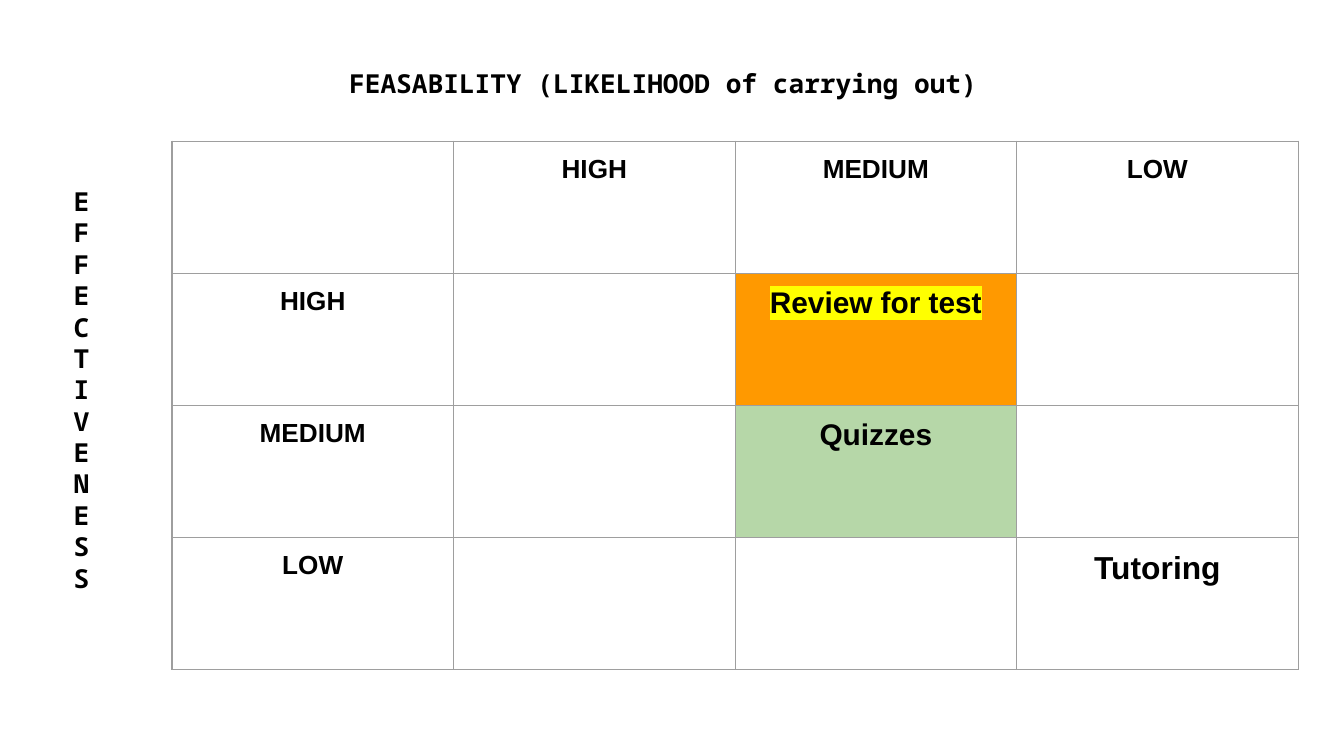
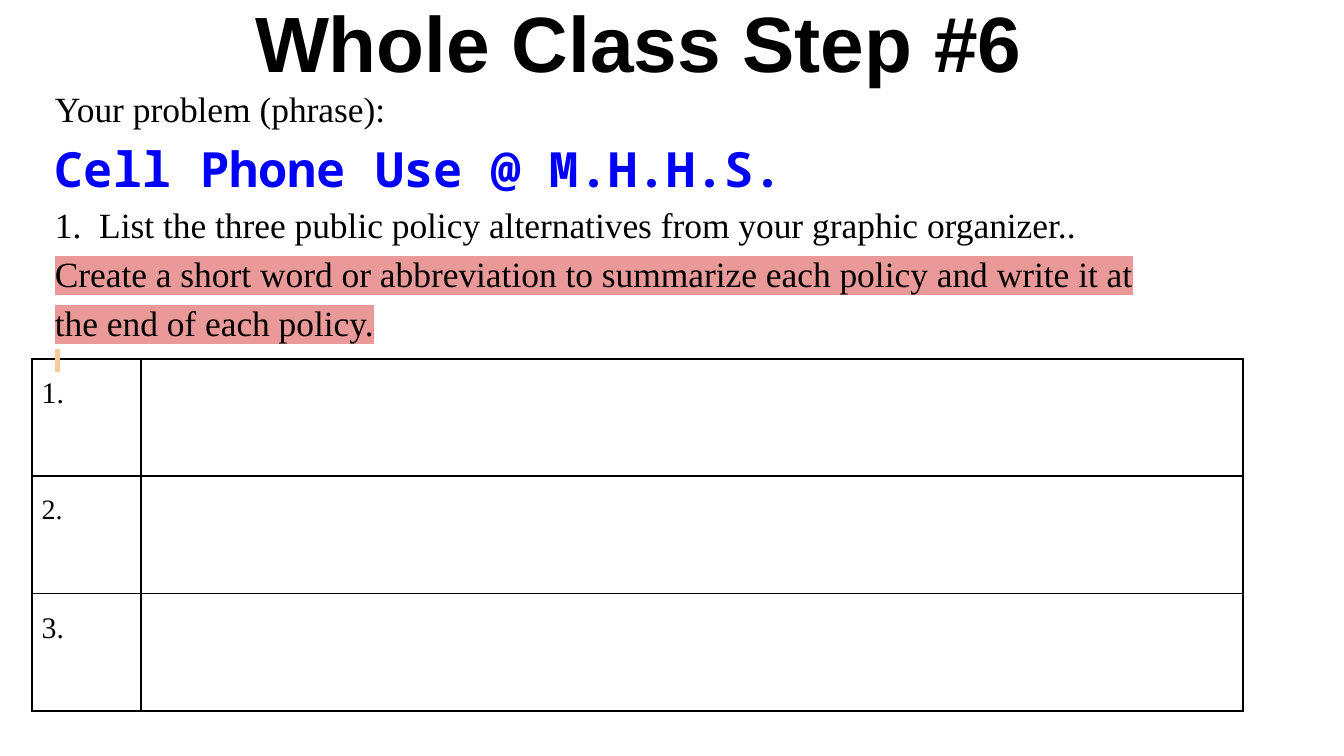
from dataclasses import dataclass
from typing import Optional

from lxml.etree import SubElement
from pptx import Presentation
from pptx.dml.color import RGBColor
from pptx.enum.text import MSO_ANCHOR, PP_ALIGN
from pptx.oxml import parse_xml
from pptx.oxml.ns import nsdecls, qn
from pptx.util import Inches, Pt

BLACK = RGBColor(0x00, 0x00, 0x00)
BLUE = RGBColor(0x00, 0x00, 0xFF)
GRAY = RGBColor(0x9E, 0x9E, 0x9E)
ORANGE = RGBColor(0xFF, 0x99, 0x00)
GREEN = RGBColor(0xB6, 0xD7, 0xA8)
YELLOW = RGBColor(0xFF, 0xFF, 0x00)
PINK = RGBColor(0xEA, 0x99, 0x99)
PEACH = RGBColor(0xF9, 0xCB, 0x9C)

SANS = "Arial"
MONO = "Noto Sans Mono"
SERIF = "Times New Roman"
PAD = Inches(0.1)
LEVELS = ("HIGH", "MEDIUM", "LOW")


@dataclass(frozen=True)
class Style:
    font: str
    size: float
    bold: bool = False
    color: RGBColor = BLACK
    mark: Optional[RGBColor] = None


@dataclass(frozen=True)
class Entry:
    text: str
    style: Style
    fill: Optional[RGBColor] = None


@dataclass(frozen=True)
class Box:
    left: float
    top: float
    width: float
    height: float

    def spots(self) -> tuple:
        return tuple(Inches(n) for n in (self.left, self.top, self.width, self.height))


@dataclass(frozen=True)
class Grid:
    box: Box
    cols: tuple
    rows: int
    line: RGBColor
    weight: float
    inset: float
    align: PP_ALIGN
    space: float


HEAD = Style(SANS, 14, True)
AXIS = Style(MONO, 14, True)
BODY = Style(SERIF, 19)


def paint(run, style: Style) -> None:
    font = run.font
    font.name, font.size, font.bold = style.font, Pt(style.size), style.bold
    font.color.rgb = style.color
    if style.mark is not None:
        mark = parse_xml(f'<a:highlight {nsdecls("a")}><a:srgbClr val="{style.mark}"/></a:highlight>')
        font.fill._xPr.find(qn("a:solidFill")).addnext(mark)


def write(para, parts: list, align: PP_ALIGN = PP_ALIGN.LEFT, space: float = 1.0) -> None:
    para.alignment, para.line_spacing = align, space
    for part in parts:
        run = para.add_run()
        run.text = part.text
        paint(run, part.style)


def add_text(slide, box: Box, lines: list, align: PP_ALIGN = PP_ALIGN.LEFT, space: float = 1.0):
    frame = slide.shapes.add_textbox(*box.spots()).text_frame
    frame.word_wrap = True
    frame.margin_left = frame.margin_right = frame.margin_top = frame.margin_bottom = PAD
    for row, parts in enumerate(lines):
        para = frame.add_paragraph() if row else frame.paragraphs[0]
        write(para, parts, align, space)
    return frame


def add_edge(cell, color: RGBColor, weight: float) -> None:
    props = cell._tc.get_or_add_tcPr()
    for spot, side in enumerate("LRTB"):
        line = parse_xml(
            f'<a:ln{side} {nsdecls("a")} w="{Pt(weight)}"><a:solidFill>'
            f'<a:srgbClr val="{color}"/></a:solidFill></a:ln{side}>'
        )
        props.insert(spot, line)


def add_grid(slide, grid: Grid, items: dict) -> None:
    table = slide.shapes.add_table(grid.rows, len(grid.cols), *grid.box.spots()).table
    table.first_row = table.horz_banding = False
    for col, width in zip(table.columns, grid.cols):
        col.width = Inches(width)
    for row in table.rows:
        row.height = Inches(grid.box.height / grid.rows)
    for r in range(grid.rows):
        for c in range(len(grid.cols)):
            cell = table.cell(r, c)
            cell.margin_left = cell.margin_right = Inches(grid.inset)
            cell.margin_top = cell.margin_bottom = PAD
            cell.fill.background()
            add_edge(cell, grid.line, grid.weight)
            entry = items.get((r, c))
            if entry:
                write(cell.text_frame.paragraphs[0], [entry], grid.align, grid.space)
                if entry.fill is not None:
                    cell.fill.solid()
                    cell.fill.fore_color.rgb = entry.fill


def draw_chart(slide) -> None:
    items = {
        (1, 2): Entry("Review for test", Style(SANS, 16, True, mark=YELLOW), ORANGE),
        (2, 2): Entry("Quizzes", Style(SANS, 16, True), GREEN),
        (3, 3): Entry("Tutoring", Style(SANS, 17, True)),
    }
    for rank, level in enumerate(LEVELS, 1):
        items[0, rank] = items[rank, 0] = Entry(level, HEAD)
    box = Box(1.28, 1.05, 8.38, 3.93)
    grid = Grid(box, (box.width / 4,) * 4, 4, GRAY, 0.75, 0.1, PP_ALIGN.CENTER, 1.0)
    add_grid(slide, grid, items)
    add_text(slide, Box(2.5, 0.4, 5.13, 0.42), [[Entry("FEASABILITY (LIKELIHOOD of carrying out)", AXIS)]])
    add_text(slide, Box(0.45, 1.28, 0.31, 3.48), [[Entry("EFFECTIVENESS", AXIS)]])


def draw_step(slide) -> None:
    sizes = (16, 15, 16)
    items = {(r, 0): Entry(f"{r + 1}.", Style(SERIF, size)) for r, size in enumerate(sizes)}
    grid = Grid(Box(0.24, 2.67, 9.01, 2.62), (0.81, 8.2), 3, BLACK, 1, 0.07, PP_ALIGN.LEFT, 1.15)
    add_grid(slide, grid, items)

    task = "Create a short word or abbreviation to summarize each policy and write it at the end of each policy."
    lines = [
        [Entry("Your problem (phrase):", BODY)],
        [Entry("Cell Phone Use @ M.H.H.S.", Style(MONO, 26, True, BLUE))],
        [
            Entry("1.\tList the three public policy alternatives from your graphic organizer.. ", BODY),
            Entry(task, Style(SERIF, 19, mark=PINK)),
        ],
        [Entry(" ", Style(SERIF, 11, mark=PEACH))],
    ]
    frame = add_text(slide, Box(0.31, 0.6, 8.39, 2.07), lines, space=1.15)
    frame.vertical_anchor = MSO_ANCHOR.MIDDLE
    frame.margin_bottom = Inches(0)
    tabs = SubElement(frame.paragraphs[2]._p.get_or_add_pPr(), qn("a:tabLst"))
    SubElement(tabs, qn("a:tab"), pos=str(Inches(0.33)), algn="l")

    title = Entry("Whole Class Step #6", Style(SANS, 42, True))
    add_text(slide, Box(0.44, -0.14, 8.62, 0.73), [[title]], PP_ALIGN.CENTER)


def main() -> None:
    deck = Presentation()
    deck.slide_width = Inches(10)
    deck.slide_height = deck.slide_width * 9 // 16
    for draw in (draw_chart, draw_step):
        draw(deck.slides.add_slide(deck.slide_layouts[6]))
    deck.save("out.pptx")


if __name__ == "__main__":
    main()
